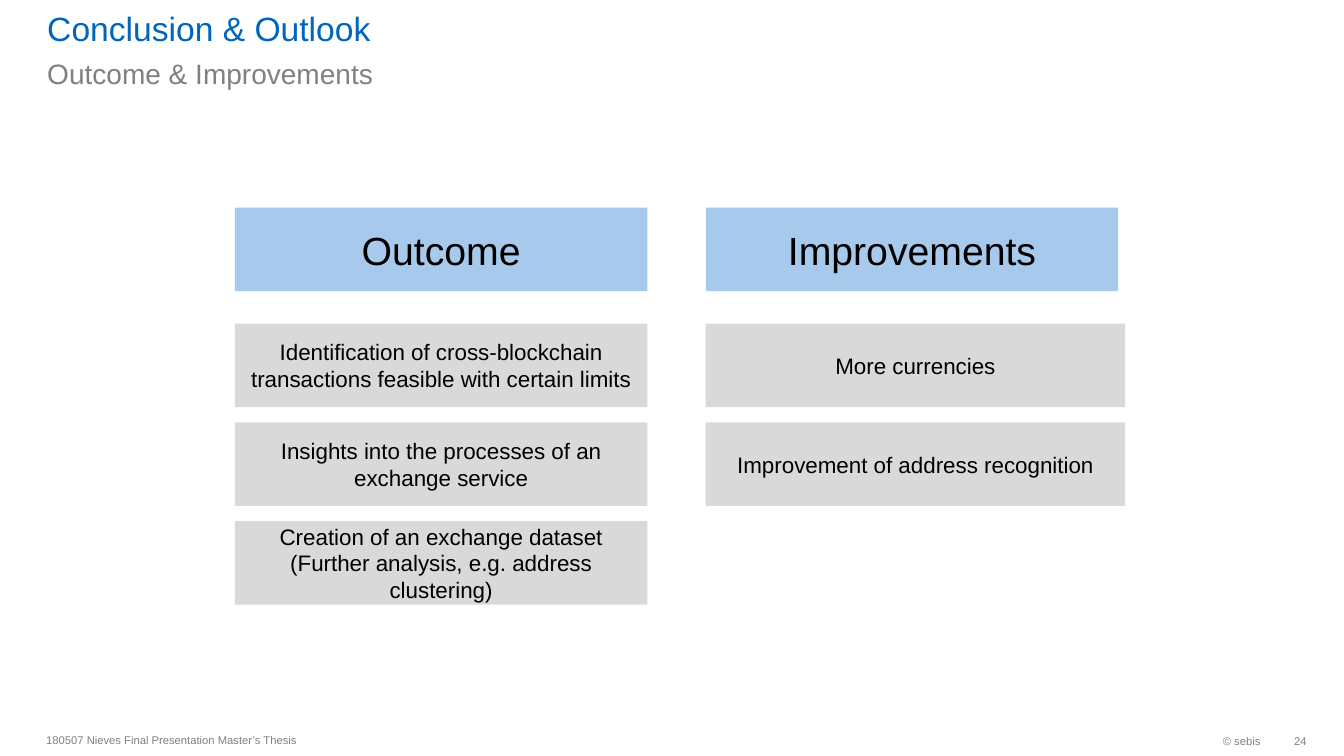
from typing import NamedTuple

from pptx import Presentation
from pptx.dml.color import RGBColor
from pptx.enum import shapes, text
from pptx.util import Inches, Pt

BLUE = RGBColor(0x00, 0x65, 0xBD)
SKY = RGBColor(0xA7, 0xC9, 0xEB)
SILVER = RGBColor(0xD9, 0xD9, 0xD9)
GREY = RGBColor(0x80, 0x80, 0x80)
BLACK = RGBColor(0x00, 0x00, 0x00)

LEFT, CENTER, RIGHT = text.PP_ALIGN.LEFT, text.PP_ALIGN.CENTER, text.PP_ALIGN.RIGHT
TOP, MIDDLE, BOTTOM = text.MSO_ANCHOR.TOP, text.MSO_ANCHOR.MIDDLE, text.MSO_ANCHOR.BOTTOM

# Grid of boxes, in inches
COLS = (2.33, 7.0)
HEAD_TOP, ITEM_TOP, STEP = 2.06, 3.21, 0.98
WIDE, HIGH = 4.09, 0.83


class Area(NamedTuple):
    left: float
    top: float
    width: float
    height: float


class Label(NamedTuple):
    words: str
    area: Area
    size: int
    color: RGBColor = GREY
    align: text.PP_ALIGN = LEFT
    anchor: text.MSO_ANCHOR = MIDDLE
    inset: tuple[float, float, float, float] = (0.1, 0.05, 0.1, 0.05)


class Column(NamedTuple):
    head: str
    width: float
    items: tuple[str, ...]


LABELS = (
    Label("Conclusion & Outlook", Area(0.37, 0.09, 11.58, 0.39), 24, BLUE,
          anchor=BOTTOM, inset=(0.1, 0, 0.1, 0)),
    Label("Outcome & Improvements", Area(0.37, 0.48, 11.58, 0.43), 20,
          anchor=TOP, inset=(0.1, 0.08, 0.1, 0)),
    Label("180507 Nieves Final Presentation Master’s Thesis",
          Area(0.36, 7.18, 6.3, 0.32), 8),
    Label("© sebis", Area(10.26, 7.19, 2.34, 0.32), 8, align=RIGHT),
    Label("24", Area(12.6, 7.19, 0.36, 0.32), 8, align=RIGHT,
          inset=(0.1, 0.05, 0, 0.05)),
)

COLUMNS = (
    Column("Outcome", WIDE, (
        "Identification of cross-blockchain transactions feasible with certain limits",
        "Insights into the processes of an exchange service",
        "Creation of an exchange dataset (Further analysis, e.g. address clustering)",
    )),
    Column("Improvements", 4.16, (
        "More currencies",
        "Improvement of address recognition",
    )),
)


def write(shape, label: Label) -> None:
    frame = shape.text_frame
    frame.word_wrap = True
    frame.vertical_anchor = label.anchor
    (frame.margin_left, frame.margin_top,
     frame.margin_right, frame.margin_bottom) = map(Inches, label.inset)
    para = frame.paragraphs[0]
    para.alignment = label.align
    run = para.add_run()
    run.text = label.words
    run.font.name = "Arial"
    run.font.size = Pt(label.size)
    run.font.color.rgb = label.color


def add_label(slide, label: Label) -> None:
    write(slide.shapes.add_textbox(*map(Inches, label.area)), label)


def add_box(slide, words: str, area: Area, fill: RGBColor, size: int) -> None:
    box = slide.shapes.add_shape(shapes.MSO_SHAPE.RECTANGLE, *map(Inches, area))
    box.shadow.inherit = False
    box.fill.solid()
    box.fill.fore_color.rgb = fill
    box.line.fill.background()
    write(box, Label(words, area, size, BLACK, CENTER))


def main() -> None:
    deck = Presentation()
    deck.slide_width, deck.slide_height = Inches(13.33), Inches(7.5)
    slide = deck.slides.add_slide(deck.slide_layouts[6])

    # Title, subtitle and footer
    for label in LABELS:
        add_label(slide, label)

    # Headed columns of findings
    for left, column in zip(COLS, COLUMNS):
        add_box(slide, column.head, Area(left, HEAD_TOP, WIDE, HIGH), SKY, 28)
        for row, item in enumerate(column.items):
            area = Area(left, ITEM_TOP + row * STEP, column.width, HIGH)
            add_box(slide, item, area, SILVER, 16)

    deck.save("out.pptx")


if __name__ == "__main__":
    main()
